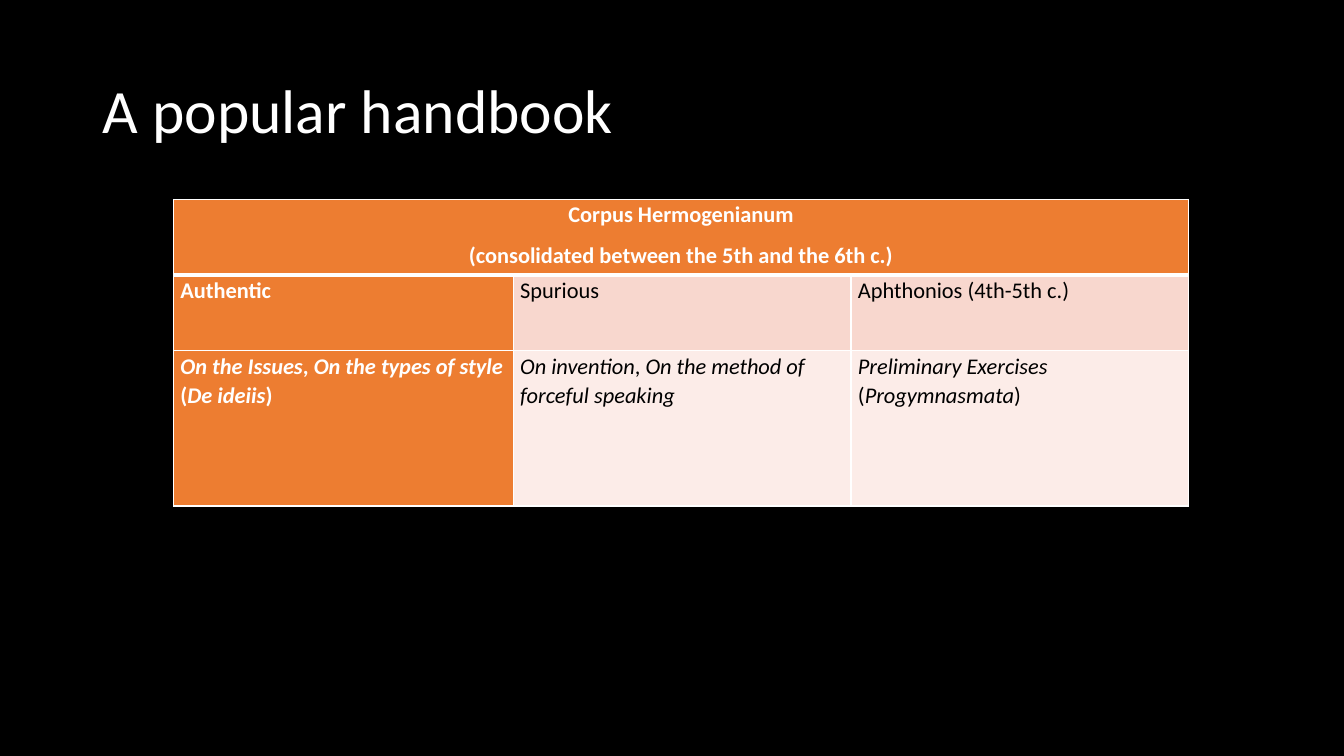
import pptx
import pptx.util
import pptx.dml.color
import pptx.enum.text
import pptx.oxml
import pptx.oxml.ns
from pptx.util import Inches

COLORS = {"background": "000000", "white": "FFFFFF", "black": "000000",
          "orange": "ED7D31", "rose": "F8D7CE", "pale": "FCECE8"}
ALIGN = pptx.enum.text.PP_ALIGN
ANCHOR = pptx.enum.text.MSO_ANCHOR

# Each cell is a list of paragraphs, each paragraph a list of (text, italic)
HEADING = [[("Corpus Hermogenianum", False)],
           [("(consolidated between the 5th and the 6th c.)", False)]]
CATEGORIES = [[[("Authentic", False)]],
              [[("Spurious", False)]],
              [[("Aphthonios (4th-5th c.)", False)]]]
WORKS = [
    [[("On the Issues", True), (", ", False), ("On the types of style ", True),
      ("(", False), ("De ideiis", True), (")", False)]],
    [[("On invention", True), (", ", False),
      ("On the method of forceful speaking", True)]],
    [[("Preliminary Exercises ", True), ("(", False),
      ("Progymnasmata", True), (")", False)]],
]
COLUMN_WIDTHS = [3.37, 3.35, 3.35]
ROW_HEIGHTS = [0.75, 0.75, 1.54]


def rgb(name):
    return pptx.dml.color.RGBColor.from_string(COLORS[name])


def apply(target, values):
    for name, value in values.items():
        setattr(target, name, value)


def add_run(paragraph, text, size, color, bold=False, italic=False):
    run = paragraph.add_run()
    run.text = text
    apply(run.font, {"name": "Calibri", "size": pptx.util.Pt(size),
                     "bold": bold, "italic": italic})
    run.font.color.rgb = rgb(color)


def set_borders(cell, top, bottom):
    """Draw white borders; top and bottom are widths in points."""
    properties = cell._tc.get_or_add_tcPr()
    widths = {"lnL": 1, "lnR": 1, "lnT": top, "lnB": bottom}
    for position, (side, width) in enumerate(widths.items()):
        properties.insert(position, pptx.oxml.parse_xml(
            f'<a:{side} {pptx.oxml.ns.nsdecls("a")} w="{pptx.util.Pt(width)}">'
            f'<a:solidFill><a:srgbClr val="{COLORS["white"]}"/></a:solidFill>'
            f'</a:{side}>'))


def fill_cell(cell, paragraphs, fill, color, bold, align):
    cell.fill.solid()
    cell.fill.fore_color.rgb = rgb(fill)
    apply(cell, {"margin_left": Inches(0.07), "margin_right": Inches(0.07),
                 "margin_top": 0, "margin_bottom": 0,
                 "vertical_anchor": ANCHOR.TOP})
    for index, runs in enumerate(paragraphs):
        frame = cell.text_frame
        paragraph = frame.add_paragraph() if index else frame.paragraphs[0]
        apply(paragraph, {"alignment": align, "line_spacing": 1.07,
                          "space_after": pptx.util.Pt(8)})
        for text, italic in runs:
            add_run(paragraph, text, 16, color, bold, italic)


def place_title(slide, left, top, width, height):
    title = slide.shapes.title
    apply(title, {"left": Inches(left), "top": Inches(top),
                  "width": Inches(width), "height": Inches(height)})
    apply(title.text_frame, {"vertical_anchor": ANCHOR.MIDDLE, "word_wrap": True})
    paragraph = title.text_frame.paragraphs[0]
    apply(paragraph, {"alignment": ALIGN.LEFT, "line_spacing": 0.9})
    add_run(paragraph, "A popular handbook", 44, "white")


def place_corpus_table(slide, left, top):
    corpus = slide.shapes.add_table(
        len(ROW_HEIGHTS), len(COLUMN_WIDTHS), Inches(left), Inches(top),
        Inches(sum(COLUMN_WIDTHS)), Inches(sum(ROW_HEIGHTS))).table
    for column, width in zip(corpus.columns, COLUMN_WIDTHS):
        column.width = Inches(width)
    for row, height in zip(corpus.rows, ROW_HEIGHTS):
        row.height = Inches(height)

    # Heading across all columns
    corpus.cell(0, 0).merge(corpus.cell(0, len(COLUMN_WIDTHS) - 1))
    fill_cell(corpus.cell(0, 0), HEADING, "orange", "white", True, ALIGN.CENTER)

    # Categories and their works, with the first column emphasised
    for row, (contents, tint) in enumerate([(CATEGORIES, "rose"), (WORKS, "pale")], 1):
        for column, paragraphs in enumerate(contents):
            first = column == 0
            fill_cell(corpus.cell(row, column), paragraphs,
                      "orange" if first else tint,
                      "white" if first else "black", first, ALIGN.LEFT)

    # Borders, thicker under the heading
    for row in range(len(ROW_HEIGHTS)):
        for column in range(len(COLUMN_WIDTHS)):
            set_borders(corpus.cell(row, column),
                        3 if row == 1 else 1, 3 if row == 0 else 1)


def main():
    deck = pptx.Presentation()
    apply(deck, {"slide_width": Inches(13.33), "slide_height": Inches(7.5)})
    slide = deck.slides.add_slide(deck.slide_layouts[5])
    slide.background.fill.solid()
    slide.background.fill.fore_color.rgb = rgb("background")
    place_title(slide, 0.92, 0.4, 11.5, 1.45)
    place_corpus_table(slide, 1.72, 1.98)
    deck.save("out.pptx")


if __name__ == "__main__":
    main()
